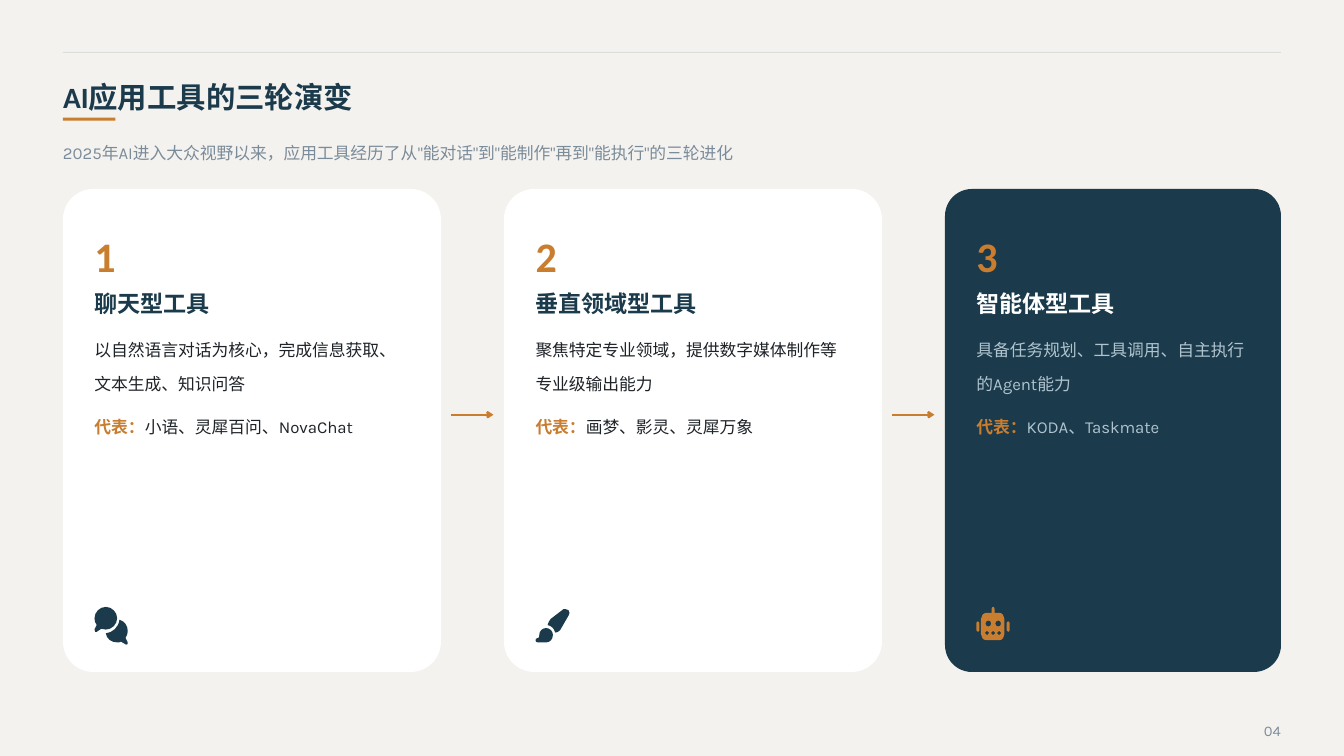
import lxml.etree
import pptx
import pptx.dml.color
import pptx.enum.shapes
import pptx.enum.text
import pptx.oxml.ns
import pptx.util

Pt = pptx.util.Pt
RGBColor = pptx.dml.color.RGBColor
Align = pptx.enum.text.PP_ALIGN
Anchor = pptx.enum.text.MSO_ANCHOR
Shape = pptx.enum.shapes.MSO_SHAPE
qn = pptx.oxml.ns.qn

PAPER = RGBColor(0xF4, 0xF2, 0xEE)
NAVY = RGBColor(0x1B, 0x3A, 0x4B)
ORANGE = RGBColor(0xC8, 0x7D, 0x2F)
SLATE = RGBColor(0x7A, 0x8B, 0x99)
INK = RGBColor(0x1E, 0x23, 0x28)
MIST = RGBColor(0xB0, 0xC4, 0xD0)
WHITE = RGBColor(0xFF, 0xFF, 0xFF)

MARGIN = 60
CARD_TOP = 180
CARD_HEIGHT = 460
GAP = 60
PADDING = 30
ICON_TOP = 578
ICON_UNIT = 0.72

NUMBER = {"name": "Calibri", "size": Pt(40), "bold": True, "color": ORANGE}
HEADING = {"name": "Calibri", "size": Pt(22), "bold": True}
BODY = {"name": "Karla", "size": Pt(16), "bold": False}
LABEL = BODY | {"bold": True, "color": ORANGE}


def pill(left, top, width, height):
    right, bottom = left + width, top + height
    radius = width / 2 if width < height else height / 2
    bend = radius * 0.45
    segments = [
        (left + radius, top), (right - radius, top),
        (right - bend, top, right, top + bend, right, top + radius),
        (right, bottom - radius),
        (right, bottom - bend, right - bend, bottom, right - radius, bottom),
        (left + radius, bottom),
        (left + bend, bottom, left, bottom - bend, left, bottom - radius),
        (left, top + radius),
        (left, top + bend, left + bend, top, left + radius, top),
    ]
    return segments[:1] + [segment for before, segment in zip(segments, segments[1:])
                           if segment != before[-2:]]


CHAT = [
    [(30, 15), (30, 23, 23, 30, 15, 30), (13, 30, 11, 30, 9, 29), (3, 33),
     (2, 33, 1, 33, 1, 33), (0, 32, 0, 31, 0, 30), (3, 24),
     (1, 22, 0, 18, 0, 15), (0, 7, 7, 0, 15, 0), (23, 0, 30, 7, 30, 15)],
    [(30, 47), (22, 47, 16, 42, 15, 35), (24, 34, 32, 27, 33, 17),
     (40, 19, 44, 25, 44, 32), (44, 35, 43, 38, 41, 41), (44, 47),
     (45, 48, 44, 49, 44, 49), (43, 50, 42, 50, 42, 50), (35, 46),
     (34, 47, 32, 47, 30, 47)],
]
BRUSH = [
    [(37, 3), (20, 16), (18, 18, 17, 21, 16, 24), (21, 25, 25, 29, 26, 34),
     (29, 34, 31, 33, 33, 30), (44, 11), (45, 10, 45, 9, 45, 8),
     (45, 5, 43, 3, 40, 3), (39, 3, 38, 3, 37, 3)],
    [(23, 37), (23, 32, 19, 28, 14, 28), (9, 28, 5, 32, 5, 37),
     (5, 40, 5, 41, 3, 41), (1, 41, 0, 43, 0, 44), (0, 46, 1, 47, 3, 47),
     (14, 47), (19, 47, 23, 43, 23, 37)],
]
ROBOT = [
    [(24, 3), (24, 1, 23, 0, 22, 0), (21, 0, 20, 1, 20, 3), (20, 8), (13, 8),
     (9, 8, 6, 12, 6, 16), (6, 36), (6, 40, 9, 44, 13, 44), (31, 44),
     (34, 44, 37, 40, 37, 36), (37, 16), (37, 12, 34, 8, 31, 8), (24, 8)],
    *[pill(left, 32, 6, 5) for left in (11, 19, 27)],
    *[pill(left, 18, 7.5, 8) for left in (12, 25)],
    *[pill(left, 19, 4, 14) for left in (0, 40)],
]

CARDS = [
    {"width": 360, "fill": WHITE, "title": "聊天型工具", "title_color": NAVY,
     "text": "以自然语言对话为核心，完成信息获取、文本生成、知识问答",
     "examples": "小语、灵犀百问、NovaChat", "text_color": INK,
     "icon": CHAT, "icon_color": NAVY},
    {"width": 360, "fill": WHITE, "title": "垂直领域型工具", "title_color": NAVY,
     "text": "聚焦特定专业领域，提供数字媒体制作等专业级输出能力",
     "examples": "画梦、影灵、灵犀万象", "text_color": INK,
     "icon": BRUSH, "icon_color": NAVY},
    {"width": 320, "fill": NAVY, "title": "智能体型工具", "title_color": WHITE,
     "text": "具备任务规划、工具调用、自主执行的Agent能力",
     "examples": "KODA、Taskmate", "text_color": MIST,
     "icon": ROBOT, "icon_color": ORANGE},
]


def write_text(box, paragraphs, spacing, wrap=False, align=Align.LEFT,
               anchor=Anchor.TOP):
    frame = box.text_frame
    settings = {"margin_left": 0, "margin_top": 0, "margin_right": 0,
                "margin_bottom": 0, "word_wrap": wrap, "vertical_anchor": anchor,
                "auto_size": pptx.enum.text.MSO_AUTO_SIZE.NONE}
    for key, value in settings.items():
        setattr(frame, key, value)
    for index, spans in enumerate(paragraphs):
        para = frame.add_paragraph() if index else frame.paragraphs[0]
        para.alignment = align
        para.line_spacing = spacing
        if index:
            para.space_before = Pt(8)
        for text, style in spans:
            span = para.add_run()
            span.text = text
            for key, value in style.items():
                if key == "color":
                    span.font.color.rgb = value
                else:
                    setattr(span.font, key, value)


def add_text(page, place, paragraphs, spacing, **options):
    box = page.shapes.add_textbox(*map(Pt, place))
    write_text(box, paragraphs, spacing, **options)


def add_title(page, text):
    title = page.shapes.title
    for key, value in zip(("left", "top", "width", "height"), (MARGIN, 65, 800, 40)):
        setattr(title, key, Pt(value))
    style = HEADING | {"size": Pt(28), "color": NAVY}
    write_text(title, [[(text, style)]], 1.3)


def paint(shape, color):
    shape.shadow.inherit = False
    shape.fill.solid()
    shape.fill.fore_color.rgb = color
    shape.line.fill.background()


def add_block(page, kind, place, color):
    block = page.shapes.add_shape(kind, *map(Pt, place))
    paint(block, color)
    return block


def add_line(page, start, end, height, color, weight):
    line = page.shapes.add_connector(
        pptx.enum.shapes.MSO_CONNECTOR.STRAIGHT,
        Pt(start), Pt(height), Pt(end), Pt(height))
    line.line.color.rgb = color
    line.line.width = Pt(weight)
    properties = line._element.spPr
    lxml.etree.SubElement(properties, qn("a:effectLst"))
    return properties.find(qn("a:ln"))


def add_rule(page):
    outline = add_line(page, MARGIN, 1220, 50, SLATE, 1)
    color = outline.find(".//" + qn("a:srgbClr"))
    lxml.etree.SubElement(color, qn("a:alpha"), val="20000")


def add_arrow(page, start, end):
    outline = add_line(page, start, end, 395, ORANGE, 2)
    lxml.etree.SubElement(outline, qn("a:tailEnd"), type="arrow")


def place_points(left, segment):
    return [(Pt(left + x * ICON_UNIT), Pt(ICON_TOP + y * ICON_UNIT))
            for x, y in zip(segment[::2], segment[1::2])]


def add_icon(page, left, contours, color):
    outlines = [[place_points(left, segment) for segment in contour]
                for contour in contours]
    builder = page.shapes.build_freeform(*outlines[0][0][0])
    for index, outline in enumerate(outlines):
        if index:
            builder.move_to(*outline[0][0])
        builder.add_line_segments([points[-1] for points in outline[1:]], close=True)
    icon = builder.convert_to_shape()
    paint(icon, color)
    segments = [points for outline in outlines for points in outline[1:]]
    lines = list(icon._element.spPr.iter(qn("a:lnTo")))
    for line, points in zip(lines, segments):
        if len(points) == 3:
            curve = lxml.etree.Element(qn("a:cubicBezTo"))
            for x, y in points:
                lxml.etree.SubElement(curve, qn("a:pt"), x=str(x - icon.left),
                                      y=str(y - icon.top))
            line.getparent().replace(line, curve)


def add_card(page, left, number, card):
    block = add_block(page, Shape.ROUNDED_RECTANGLE,
                      (left, CARD_TOP, card["width"], CARD_HEIGHT), card["fill"])
    block.adjustments[0] = 0.08
    inner = left + PADDING
    width = card["width"] - 2 * PADDING
    heading = HEADING | {"color": card["title_color"]}
    body = BODY | {"color": card["text_color"]}
    add_text(page, (inner, 210, 60, 50), [[(str(number), NUMBER)]], 1.2)
    add_text(page, (inner, 270, width, 30), [[(card["title"], heading)]], 1.2)
    add_text(page, (inner, 310, width, 140),
             [[(card["text"], body)], [("代表：", LABEL), (card["examples"], body)]],
             1.7, wrap=True)
    add_icon(page, inner, card["icon"], card["icon_color"])


def main():
    deck = pptx.Presentation()
    deck.slide_width, deck.slide_height = Pt(1280), Pt(720)
    page = deck.slides.add_slide(deck.slide_layouts[5])
    page.background.fill.solid()
    page.background.fill.fore_color.rgb = PAPER
    add_rule(page)
    add_title(page, "AI应用工具的三轮演变")
    add_block(page, Shape.RECTANGLE, (MARGIN, 112, 50, 3), ORANGE)
    muted = BODY | {"color": SLATE}
    subtitle = '2025年AI进入大众视野以来，应用工具经历了从"能对话"到"能制作"再到"能执行"的三轮进化'
    add_text(page, (MARGIN, 128, 900, 28), [[(subtitle, muted)]], 1.4, wrap=True)
    left = MARGIN
    for number, card in enumerate(CARDS, 1):
        if number > 1:
            add_arrow(page, left - GAP + 10, left - 10)
        add_card(page, left, number, card)
        left += card["width"] + GAP
    add_text(page, (1160, 680, 60, 24), [[("04", muted | {"size": Pt(14)})]], 1.4,
             align=Align.RIGHT, anchor=Anchor.MIDDLE)
    deck.save("out.pptx")


if __name__ == "__main__":
    main()
